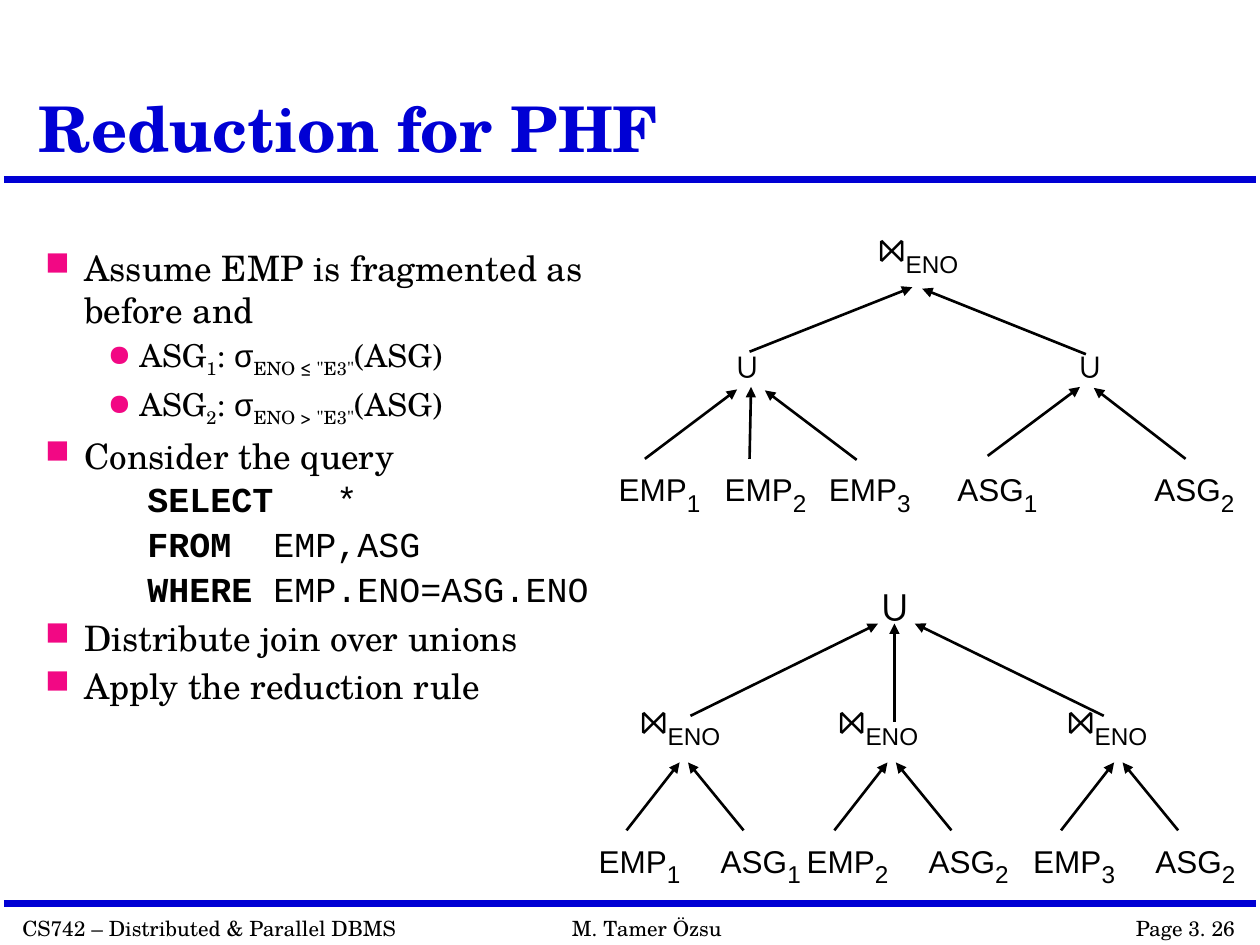
from lxml.etree import SubElement
from pptx import Presentation
from pptx.dml.color import RGBColor
from pptx.enum.shapes import MSO_CONNECTOR
from pptx.enum.text import MSO_ANCHOR, MSO_AUTO_SIZE, PP_ALIGN
from pptx.oxml.ns import qn
from pptx.util import Cm, Pt

HUES = {"blue": "0000D4", "ink": "000000", "pink": "F20884"}
SERIF, SANS, MONO, MATH = "TeX Gyre Schola", "Arial", "Courier New", "Cambria"


class Deck:
    def __init__(self):
        self.prs = Presentation()
        self.prs.slide_width, self.prs.slide_height = Cm(25.4), Cm(19.05)
        self.slide = self.prs.slides.add_slide(self.prs.slide_layouts[5])

    def font(self, font, size, face, hue="ink", bold=False):
        font.size, font.name, font.bold = Pt(size), face, bold
        font.color.rgb = RGBColor.from_string(HUES[hue])

    def title(self, text, box):
        shape = self.slide.shapes.title
        shape.left, shape.top, shape.width, shape.height = map(Cm, box)
        frame = shape.text_frame
        frame.text = text
        frame.auto_size = MSO_AUTO_SIZE.NONE
        frame.vertical_anchor = MSO_ANCHOR.BOTTOM
        para = frame.paragraphs[0]
        para.alignment, para.line_spacing = PP_ALIGN.LEFT, 0.9
        self.font(para.font, 36, SERIF, "blue", True)

    def frame(self, box, inset=True, wrap=True):
        frame = self.slide.shapes.add_textbox(*map(Cm, box)).text_frame
        frame.word_wrap = wrap
        if not inset:
            frame.margin_left = frame.margin_right = 0
            frame.margin_top = frame.margin_bottom = 0
        return frame

    def run(self, para, text, size=None, face=None, bold=None, sub=False):
        run = para.add_run()
        run.text = text
        if size:
            run.font.size = Pt(size)
        if face:
            run.font.name = face
        if bold:
            run.font.bold = True
        if sub:
            run.font._element.set("baseline", "-25000")

    def note(self, text, box, align=PP_ALIGN.LEFT):
        para = self.frame(box, wrap=False).paragraphs[0]
        para.alignment = align
        self.font(para.font, 12, SERIF)
        self.run(para, text)

    def label(self, x, y, text, sub="", size=18, face=SANS, wide=1.75, lead=None):
        para = self.frame((x, y, wide, 0.8), inset=False).paragraphs[0]
        if lead:
            para.line_spacing = Pt(lead)
        self.font(para.font, size, face)
        self.run(para, text)
        if sub:
            self.run(para, sub, 24, SANS, sub=True)

    def join(self, x, y):
        self.label(x, y, "⋈", "ENO", 25, MATH, 2.3, 22)

    def line(self, x1, y1, x2, y2, hue="ink", width=1.5, arrow=True):
        line = self.slide.shapes.add_connector(
            MSO_CONNECTOR.STRAIGHT, Cm(x1), Cm(y1), Cm(x2), Cm(y2))
        line.line.color.rgb = RGBColor.from_string(HUES[hue])
        line.line.width = Pt(width)
        if arrow:
            SubElement(line.line._get_or_add_ln(), qn("a:tailEnd"), type="triangle")
        SubElement(line._element.spPr, qn("a:effectLst"))

    def para(self, frame, left, hang, size, face):
        para = frame.paragraphs[0]
        if para.runs:
            para = frame.add_paragraph()
        props = para._p.get_or_add_pPr()
        props.set("marL", str(Cm(left)))
        props.set("indent", str(-Cm(hang)))
        return para, props

    def bullet(self, frame, parts, level=0):
        left, hang, size, mark = ((0.79, 0.79, 20, "■"), (1.9, 0.64, 18, "●"))[level]
        para, props = self.para(frame, left, hang, size, SERIF)
        para.level = level
        tint = SubElement(props, qn("a:buClr"))
        SubElement(tint, qn("a:srgbClr"), val=HUES["pink"])
        SubElement(props, qn("a:buSzPct"), val="95000")
        SubElement(props, qn("a:buChar"), char=mark)
        para.space_before = Pt(size * 0.18)
        self.font(para.font, size, SERIF)
        for text, kind in parts:
            self.run(para, text, face=SANS if kind == "sym" else None, sub=kind == "sub")

    def code(self, frame, word, rest, before=0, after=4):
        para, props = self.para(frame, 0.79, 0.79, 20, MONO)
        SubElement(props, qn("a:buNone"))
        tabs = SubElement(props, qn("a:tabLst"))
        for stop in (1, 2, 3):
            SubElement(tabs, qn("a:tab"), pos=str(Cm(2.54 * stop)), algn="l")
        para.line_spacing = 0.9
        para.space_before, para.space_after = Pt(before), Pt(after)
        self.font(para.font, 20, MONO)
        self.run(para, "\t\t" + word, bold=True)
        self.run(para, "\t" + rest)


def main():
    deck = Deck()
    for y in (3.61, 18.21):
        deck.line(0.08, y, 25.32, y, "blue", 4, False)
    deck.note("CS742 – Distributed & Parallel DBMS", (0.2, 18.34, 8.13, 0.76))
    deck.note("M. Tamer Özsu", (11.28, 18.34, 3.53, 0.76))
    deck.note("Page 3. 26", (22.61, 18.34, 2.54, 0.76), PP_ALIGN.RIGHT)
    deck.title("Reduction for PHF", (0.53, 0.3, 19.89, 3.18))

    body = deck.frame((0.66, 4.85, 12.32, 13.23))
    deck.bullet(body, [("Assume EMP is fragmented as before and", "")])
    for num, sign in (("1", "≤"), ("2", ">")):
        deck.bullet(body, [("ASG", ""), (num, "sub"), (": ", ""), ("σ", "sym"),
                           (f'ENO {sign} "E3"', "sub"), ("(ASG)", "")], 1)
    deck.bullet(body, [("Consider the query", "")])
    deck.code(body, "SELECT", "*", before=3.6)
    deck.code(body, "FROM", "EMP,ASG")
    deck.code(body, "WHERE", "EMP.ENO=ASG.ENO", after=0.1)
    for text in ("Distribute join over unions", "Apply the reduction rule"):
        deck.bullet(body, [(text, "")])

    deck.join(17.7, 4.83)
    for x in (14.81, 21.72):
        deck.label(x, 6.93, "∪", size=20, wide=0.56, lead=24)
    for x, name, num in ((12.47, "EMP", "1"), (14.61, "EMP", "2"), (16.71, "EMP", "3"),
                         (19.3, "ASG", "1"), (23.27, "ASG", "2")):
        deck.label(x, 9.27, name, num)
    for ends in ((13, 9.25, 14.86, 7.85), (15.11, 9.25, 15.14, 7.8),
                 (17.27, 9.27, 15.42, 7.87), (19.91, 9.19, 21.77, 7.8),
                 (23.9, 9.25, 22.05, 7.82), (15.11, 7.09, 18.39, 5.79),
                 (21.89, 7.14, 18.59, 5.82)):
        deck.line(*ends)

    deck.label(17.73, 11.68, "∪", size=25, wide=0.56, lead=29)
    for ends in ((13.92, 14.43, 17.7, 12.57), (18.03, 14.55, 18.03, 12.57),
                 (22.25, 14.43, 18.44, 12.57)):
        deck.line(*ends)
    for x, top, emp, asg in ((12.07, 12.9, "1", "1"), (16.26, 16.89, "2", "2"),
                             (20.83, 21.51, "3", "2")):
        deck.join(top, 14.35)
        deck.label(x, 16.76, "EMP", emp)
        deck.label(x + 2.46, 16.76, "ASG", asg)
        deck.line(x + 0.56, 16.74, x + 1.63, 15.37)
        deck.line(x + 2.92, 16.74, x + 1.8, 15.37)

    deck.prs.save("out.pptx")


if __name__ == "__main__":
    main()
